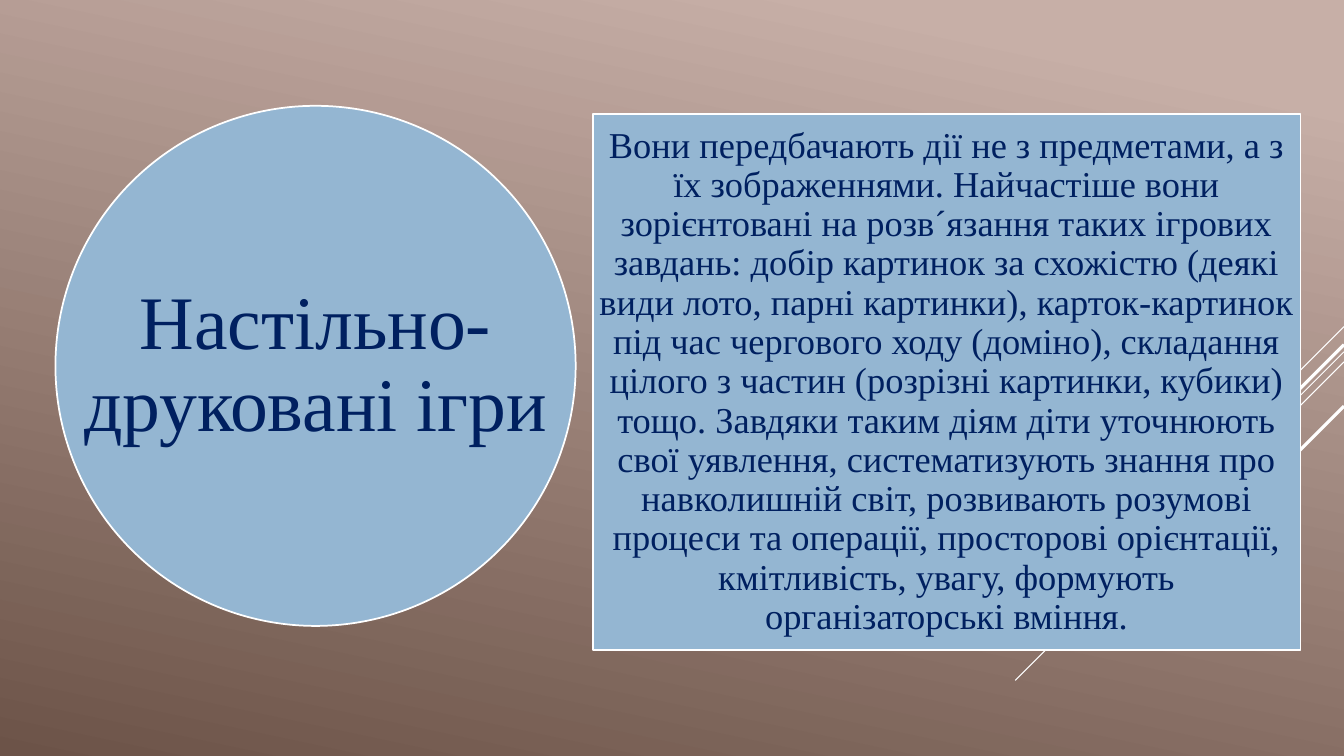
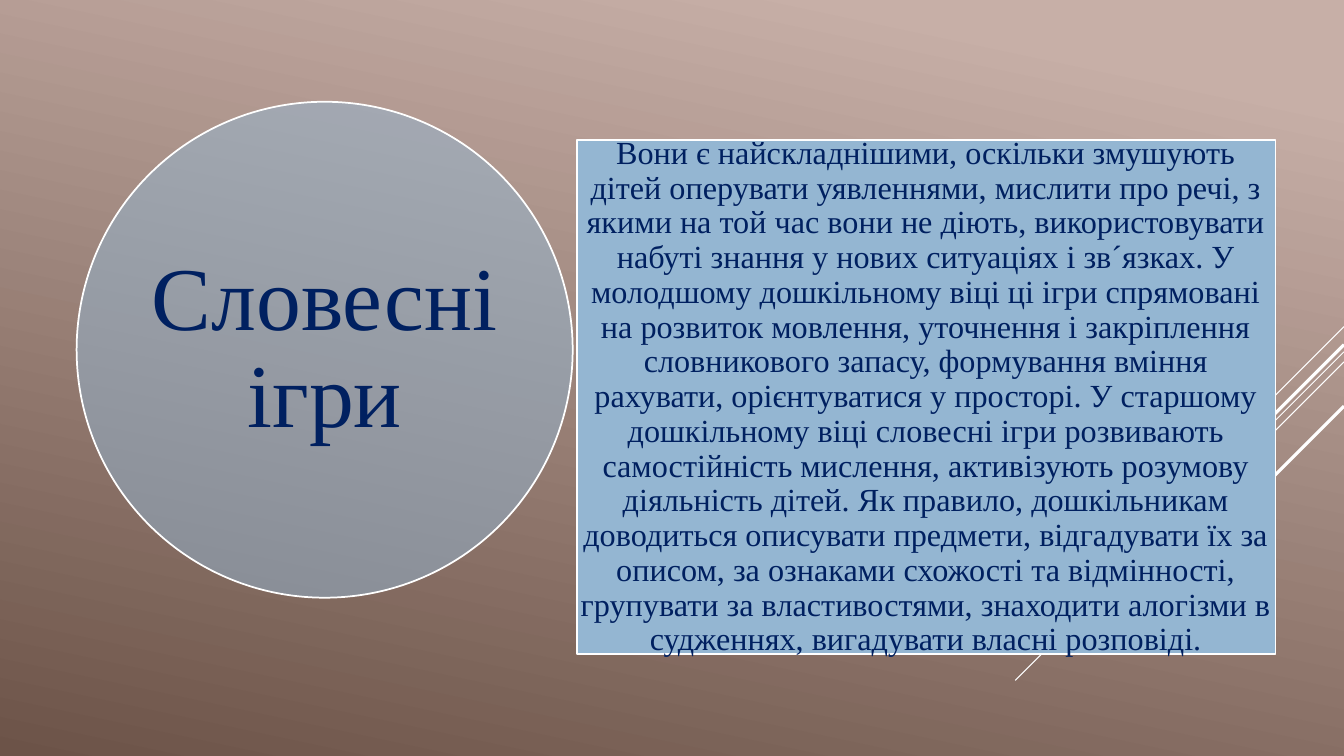
from lxml.etree import SubElement
from pptx import Presentation
from pptx.dml.color import RGBColor
from pptx.enum.shapes import MSO_CONNECTOR, MSO_SHAPE
from pptx.enum.text import MSO_ANCHOR, MSO_AUTO_SIZE, PP_ALIGN
from pptx.oxml.ns import qn
from pptx.util import Inches, Pt

COLORS = {"light": "C7AFA7", "dark": "6C5348", "blue": "94B6D2", "navy": "002060", "white": "FFFFFF"}
FONT = "Times New Roman"
WIDTH, HEIGHT = 13.33, 7.5
DIAGONALS = [(3.24, 1, 0.75), (3.49, 3.26, 0.75), (3.59, 2.07, 0.75), (3.42, 1.91, 2.25), (4.03, 1.39, 2.25)]
SLIDES = [
    {
        "title": "Настільно-друковані ігри",
        "circle": (0.55, 1.05, 5.16, 5.16), "title_size": 54, "inset": 0.07, "opacity": 100,
        "body": "Вони передбачають дії не з предметами, а з їх зображеннями. Найчастіше вони зорієнтовані "
                "на розв´язання таких ігрових завдань: добір картинок за схожістю (деякі види лото, парні "
                "картинки), карток-картинок під час чергового ходу (доміно), складання цілого з частин "
                "(розрізні картинки, кубики) тощо. Завдяки таким діям діти уточнюють свої уявлення, "
                "систематизують знання про навколишній світ, розвивають розумові процеси та операції, "
                "просторові орієнтації, кмітливість, увагу, формують організаторські вміння.",
        "panel": (5.88, 1.13, 7.02, 5.32), "body_size": 26,
    },
    {
        "title": "Словесні ігри",
        "circle": (0.76, 1.01, 4.92, 4.92), "title_size": 64, "inset": 0, "opacity": 50,
        "body": "Вони є найскладнішими, оскільки змушують дітей оперувати уявленнями, мислити про речі, "
                "з якими на той час вони не діють, використовувати набуті знання у нових ситуаціях і "
                "зв´язках. У молодшому дошкільному віці ці ігри спрямовані на розвиток мовлення, уточнення "
                "і закріплення словникового запасу, формування вміння рахувати, орієнтуватися у просторі. "
                "У старшому дошкільному віці словесні ігри розвивають самостійність мислення, активізують "
                "розумову діяльність дітей. Як правило, дошкільникам доводиться описувати предмети, "
                "відгадувати їх за описом, за ознаками схожості та відмінності, групувати за "
                "властивостями, знаходити алогізми в судженнях, вигадувати власні розповіді.",
        "panel": (5.72, 1.39, 6.93, 5.1), "body_size": 23,
    },
]


def rgb(name):
    return RGBColor.from_string(COLORS[name])


def paint(shape):
    shape.fill.solid()
    shape.fill.fore_color.rgb = rgb("blue")
    shape.line.color.rgb = rgb("white")
    shape.line.width = Pt(1.25)


def write(shape, box, text, size, inset):
    shape.left, shape.top, shape.width, shape.height = map(Inches, box)
    tf = shape.text_frame
    tf.text = text
    tf.word_wrap = True
    tf.auto_size = MSO_AUTO_SIZE.NONE
    tf.vertical_anchor = MSO_ANCHOR.MIDDLE
    tf.margin_left = tf.margin_right = tf.margin_top = tf.margin_bottom = Inches(inset)
    p = tf.paragraphs[0]
    p.alignment = PP_ALIGN.CENTER
    p.line_spacing = 0.9
    p.space_before = Pt(0)
    p.font.name, p.font.size, p.font.color.rgb = FONT, Pt(size), rgb("navy")
    pPr = p._p.get_or_add_pPr()
    pPr.set("marL", "0")
    pPr.set("indent", "0")
    pPr.insert_element_before(pPr.makeelement(qn("a:buNone")), "a:tabLst", "a:defRPr", "a:extLst")


def add_circle(s, box, opacity):
    circle = s.shapes.add_shape(MSO_SHAPE.OVAL, *map(Inches, box))
    circle.shadow.inherit = False
    paint(circle)
    if opacity < 100:
        color = circle._element.spPr.find(qn("a:solidFill"))[0]
        SubElement(color, qn("a:alpha"), val=str(opacity * 1000))
    s.shapes._spTree.insert(2, circle._element)


def style_master(prs, s):
    master = prs.slide_master
    fill = master.background.fill
    fill.gradient()
    fill.gradient_angle = 360 - 102
    for stop, position, name in zip(fill.gradient_stops, (0.1, 1), ("light", "dark")):
        stop.position = position
        stop.color.rgb = rgb(name)
    for number, (top, run, weight) in enumerate(DIAGONALS):
        ends = (WIDTH, top, WIDTH - run, top + run)
        line = s.shapes.add_connector(MSO_CONNECTOR.STRAIGHT, *map(Inches, ends))
        line.line.color.rgb = rgb("white")
        line.line.width = Pt(weight)
        SubElement(line._element.spPr, qn("a:effectLst"))
        line._element.nvCxnSpPr.cNvPr.set("id", str(100 + number))
        master.shapes._spTree.insert(2 + number, line._element)


def add_game_slide(prs, game):
    s = prs.slides.add_slide(prs.slide_layouts[1])
    title, body = s.placeholders
    write(title, game["circle"], game["title"], game["title_size"], game["inset"])
    write(body, game["panel"], game["body"], game["body_size"], 0.02)
    paint(body)
    add_circle(s, game["circle"], game["opacity"])
    return s


def main():
    prs = Presentation()
    prs.slide_width, prs.slide_height = Inches(WIDTH), Inches(HEIGHT)
    slides = [add_game_slide(prs, game) for game in SLIDES]
    style_master(prs, slides[0])
    prs.save("out.pptx")


if __name__ == "__main__":
    main()
